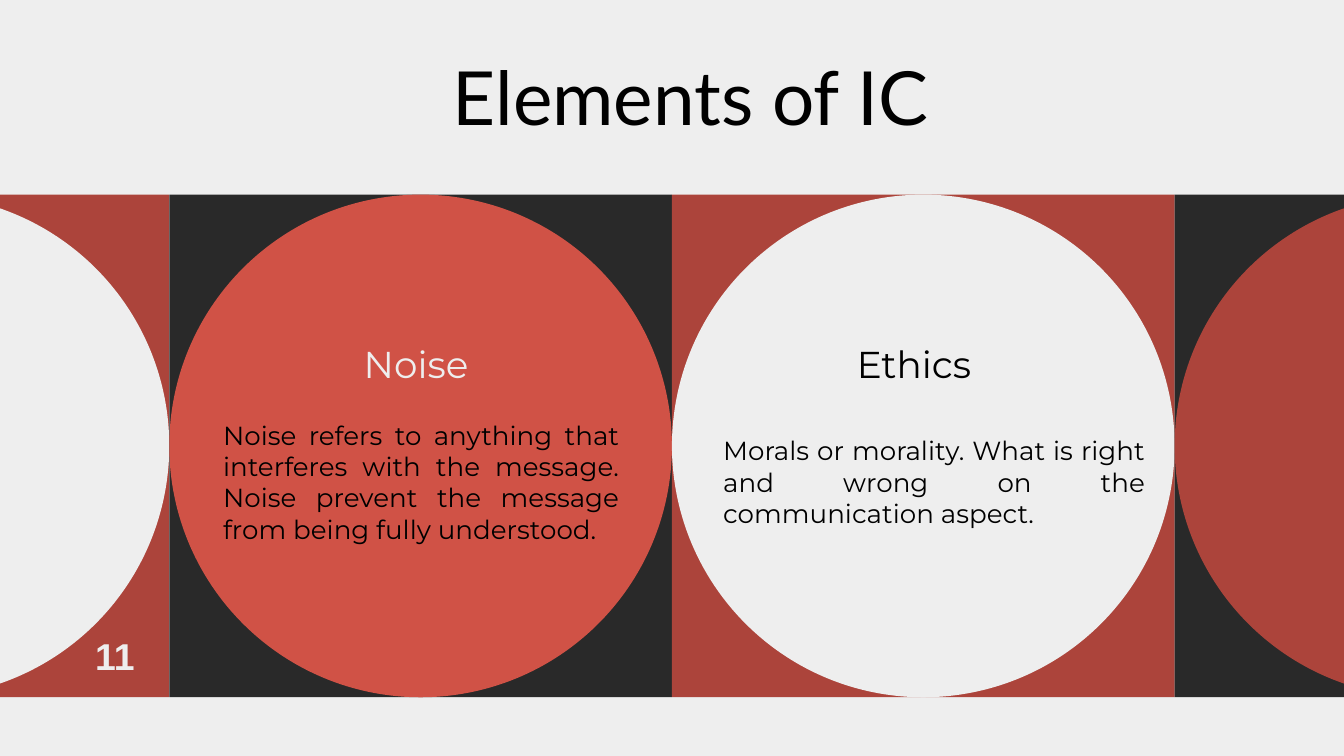
from lxml import etree
from pptx import Presentation
from pptx.dml.color import RGBColor
from pptx.enum.shapes import MSO_SHAPE
from pptx.enum.text import MSO_ANCHOR, MSO_AUTO_SIZE, PP_ALIGN
from pptx.oxml.ns import qn
from pptx.util import Pt

RECT, OVAL = MSO_SHAPE.RECTANGLE, MSO_SHAPE.OVAL
LEFT, MID, JUST = PP_ALIGN.LEFT, PP_ALIGN.CENTER, PP_ALIGN.JUSTIFY
TOP, CENTER = MSO_ANCHOR.TOP, MSO_ANCHOR.MIDDLE
FIXED = MSO_AUTO_SIZE.NONE

HUES = {"pale": "EEEEEE", "dark": "292929", "brick": "AC443B",
        "coral": "D05246", "black": "000000"}
WIDE, HIGH = 720, 405
SIDE, ROW = 269.3, 104.3

TITLE = {"name": "Lato", "size": Pt(40), "bold": False}
HEAD = {"name": "Montserrat", "size": Pt(20), "bold": False}
BODY = {"name": "Montserrat", "size": Pt(14), "bold": False}
PAGE = {"name": "Arial", "size": Pt(20), "bold": True}


def hue(name):
    return RGBColor.from_string(HUES[name])


def write(shape, text, look, color, align, anchor=CENTER, pad=7.2, right=7.2):
    frame = shape.text_frame
    form = {"word_wrap": True, "auto_size": FIXED, "vertical_anchor": anchor,
            "margin_left": Pt(7.2), "margin_right": Pt(right),
            "margin_top": Pt(pad), "margin_bottom": Pt(pad)}
    for key, value in form.items():
        setattr(frame, key, value)
    para = frame.paragraphs[0]
    para.alignment, para.space_before = align, Pt(0)
    props = para._p.get_or_add_pPr()
    props.set("marL", "0")
    props.set("indent", "0")
    etree.SubElement(props, qn("a:buNone"))
    run = para.add_run()
    run.text = text
    for key, value in look.items():
        setattr(run.font, key, value)
    run.font.color.rgb = hue(color)


def place(slide, holder, box):
    """Move a placeholder into the box and to the front."""
    for key, value in zip(("left", "top", "width", "height"), box):
        setattr(holder, key, Pt(value))
    slide.shapes._spTree.append(holder._element)


def tile(slide, box, back, disc):
    """A square with a circle filling it."""
    for kind, color in ((RECT, back), (OVAL, disc)):
        shape = slide.shapes.add_shape(kind, *map(Pt, box))
        shape.shadow.inherit = False
        shape.fill.solid()
        shape.fill.fore_color.rgb = hue(color)
        shape.line.fill.background()


def topic(slide, box, slots, head, body):
    """Heading and text set inside one tile."""
    x, y = box[:2]
    name, color, right = head
    text, inset, width = body
    place(slide, slots[0], (x + 20.2, y + 68.4, 229, 44.6))
    write(slots[0], name, HEAD, color, MID, right=right)
    place(slide, slots[1], (x + inset, y + 113.8, width, 80))
    write(slots[1], text, BODY, "black", JUST)


def header(slide, box):
    place(slide, slide.shapes.title, box)
    write(slide.shapes.title, "Elements of IC", TITLE, "black", LEFT)


def number(slide, box):
    label = slide.shapes.add_textbox(*map(Pt, box))
    write(label, "11", PAGE, "pale", LEFT, TOP, pad=3.6)


def main():
    deck = Presentation()
    deck.slide_width, deck.slide_height = Pt(WIDE), Pt(HIGH)
    slide = deck.slides.add_slide(deck.slide_layouts[4])
    slide.background.fill.solid()
    slide.background.fill.fore_color.rgb = hue("pale")
    slots = list(slide.placeholders)

    # Band of four tiles, centred on the slide
    boxes = [(WIDE / 2 + (i - 2) * SIDE, ROW, SIDE, SIDE) for i in range(4)]
    tones = [("brick", "pale"), ("dark", "coral"),
             ("brick", "pale"), ("dark", "brick")]
    for box, tone in zip(boxes, tones):
        tile(slide, box, *tone)

    # Topics in the two middle tiles
    topic(slide, boxes[1], slots[1:3], ("Noise", "pale", 12.2),
          ("Noise refers to anything that interferes with the message. "
           "Noise prevent the message from being fully understood.",
           21.6, 226.8))
    topic(slide, boxes[2], slots[3:5], ("Ethics", "black", 17.2),
          ("Morals or morality. What is right and wrong on the "
           "communication aspect.", 20.2, 240.5))

    # Title and page number
    header(slide, (235.4, 28.8, 280.8, 45.4))
    number(slide, (43.9, 335.5, 40.3, 31.7))
    deck.save("out.pptx")


if __name__ == "__main__":
    main()
